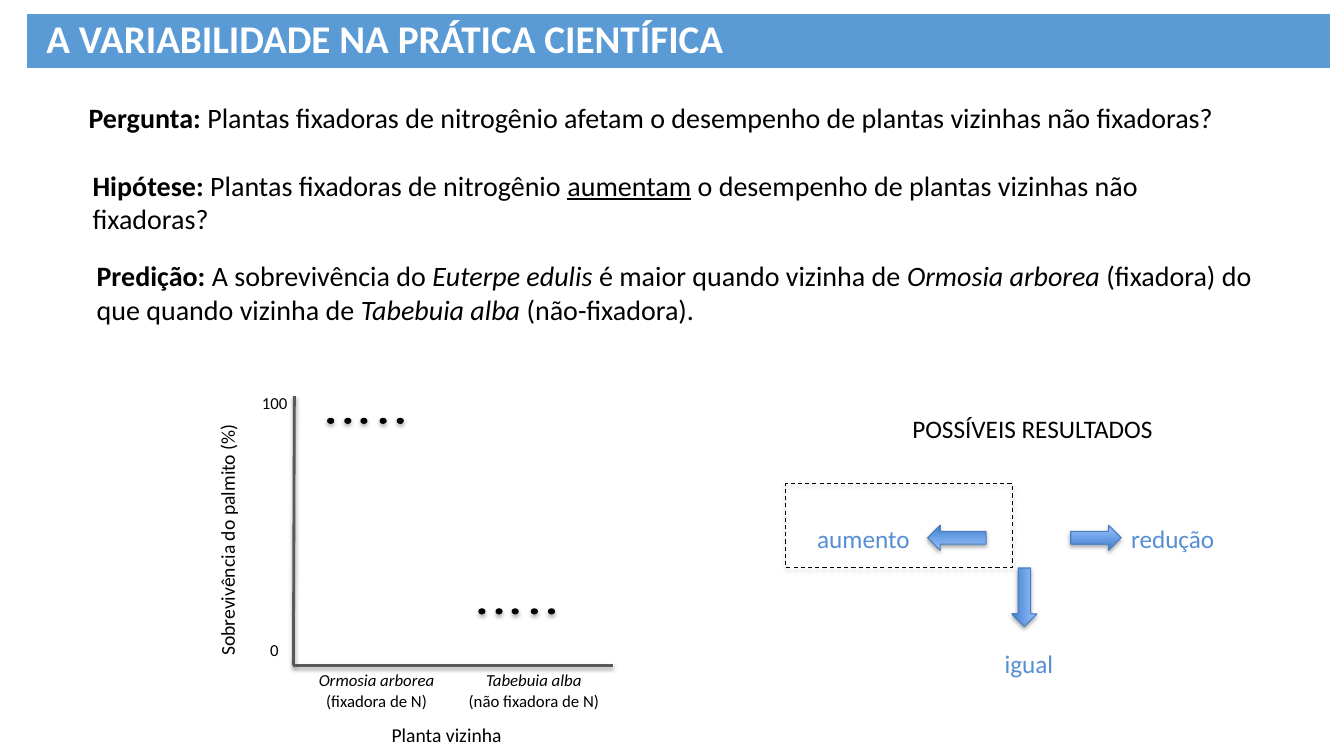
from dataclasses import dataclass

from lxml import etree
from pptx import Presentation
from pptx.dml.color import RGBColor
from pptx.enum.dml import MSO_LINE
from pptx.enum.shapes import MSO_CONNECTOR, MSO_SHAPE
from pptx.enum.text import MSO_ANCHOR, MSO_AUTO_SIZE, PP_ALIGN
from pptx.oxml.ns import qn
from pptx.util import Inches, Pt

LEFT, MID, RIGHT = PP_ALIGN.LEFT, PP_ALIGN.CENTER, PP_ALIGN.RIGHT
OVAL, RECT, ARROW = MSO_SHAPE.OVAL, MSO_SHAPE.RECTANGLE, MSO_SHAPE.RIGHT_ARROW
STRAIGHT, DASH = MSO_CONNECTOR.STRAIGHT, MSO_LINE.DASH
MIDDLE, FIXED = MSO_ANCHOR.MIDDLE, MSO_AUTO_SIZE.NONE

FONT = "Calibri"
BLACK = RGBColor(0x00, 0x00, 0x00)
WHITE = RGBColor(0xFF, 0xFF, 0xFF)
GRAY = RGBColor(0x59, 0x59, 0x59)
BAR = RGBColor(0x5B, 0x9B, 0xD5)
BLUE = RGBColor(0x55, 0x8E, 0xD5)
EDGE = RGBColor(0x4A, 0x7E, 0xBB)
LIGHT = RGBColor(0x9B, 0xC1, 0xFF)
DARK = RGBColor(0x3F, 0x80, 0xCD)

Box = tuple[float, float, float, float]
Run = tuple[str, str]


@dataclass
class Label:
    box: Box
    lines: list[list[Run]]
    size: int
    color: RGBColor = BLACK
    align: PP_ALIGN = LEFT
    turn: int = 0


@dataclass
class Arrow:
    box: Box
    turn: int


@dataclass
class Axis:
    start: tuple[float, float]
    end: tuple[float, float]


TITLE = "A VARIABILIDADE NA PRÁTICA CIENTÍFICA"
CLAIMS: list[tuple[Box, list[Run]]] = [
    ((0.78, 0.95, 11.7, 0.44), [
        ("Pergunta: ", "b"),
        ("Plantas fixadoras de nitrogênio afetam o desempenho de plantas vizinhas não fixadoras?", ""),
    ]),
    ((0.82, 1.62, 11.7, 0.77), [
        ("Hipótese: ", "b"),
        ("Plantas fixadoras de nitrogênio ", ""),
        ("aumentam", "u"),
        (" o desempenho de plantas vizinhas não fixadoras?", ""),
    ]),
    ((0.86, 2.52, 11.7, 0.77), [
        ("Predição: ", "b"),
        ("A sobrevivência do ", ""),
        ("Euterpe edulis ", "i"),
        ("é maior quando vizinha de ", ""),
        ("Ormosia arborea ", "i"),
        ("(fixadora) do que quando vizinha de ", ""),
        ("Tabebuia alba ", "i"),
        ("(não-fixadora).", ""),
    ]),
]
LABELS = [Label(box, [runs], 20) for box, runs in CLAIMS] + [
    Label((8.95, 4.05, 2.67, 0.4), [[("POSSÍVEIS RESULTADOS", "")]], 18),
    Label((7.45, 5.14, 1.67, 0.4), [[("aumento", "")]], 18, BLUE, RIGHT),
    Label((11.12, 5.14, 1.67, 0.4), [[("redução", "")]], 18, BLUE),
    Label((9.37, 6.38, 1.67, 0.4), [[("igual", "")]], 18, BLUE, MID),
    Label((0.67, 4.85, 3.17, 0.34), [[("Sobrevivência do palmito (%)", "")]], 14, turn=270),
    Label((2.58, 6.3, 0.33, 0.3), [[("0", "")]], 12),
    Label((2.5, 3.85, 0.58, 0.3), [[("100", "")]], 12),
    Label((2.78, 6.6, 1.91, 0.5),
          [[("Ormosia arborea", "i")], [("(fixadora de N)", "")]], 12, align=MID),
    Label((4.42, 6.6, 1.75, 0.5),
          [[("Tabebuia alba", "i")], [("(não fixadora de N)", "")]], 12, align=MID),
    Label((3.43, 7.12, 2, 0.34), [[("Planta vizinha", "")]], 14, align=MID),
]
ARROWS = [
    Arrow((10.62, 5.21, 0.5, 0.25), 0),
    Arrow((9.87, 5.8, 0.58, 0.25), 90),
    Arrow((9.2, 5.21, 0.58, 0.25), 180),
]
AXES = [Axis((2.92, 3.93), (2.91, 6.6)), Axis((2.91, 6.6), (6.08, 6.6))]
GROUPS = [(3.25, 4.15), (4.75, 6.04)]
STEPS = [0, 0.17, 0.33, 0.52, 0.69]


def add_shade(props) -> None:
    for old in props.findall(qn("a:effectLst")):
        props.remove(old)
    effects = etree.SubElement(props, qn("a:effectLst"))
    shade = etree.SubElement(effects, qn("a:outerShdw"), blurRad=str(Pt(3.1)),
                             dist=str(Pt(1.8)), dir="5400000", rotWithShape="0")
    tone = etree.SubElement(shade, qn("a:srgbClr"), val=str(BLACK))
    etree.SubElement(tone, qn("a:alpha"), val="35000")


def add_run(para, text: str, style: str, size: int, color: RGBColor) -> None:
    run = para.add_run()
    run.text = text
    font = run.font
    font.name, font.size, font.color.rgb = FONT, Pt(size), color
    font.bold, font.italic, font.underline = "b" in style, "i" in style, "u" in style


def add_label(slide, label: Label) -> None:
    shape = slide.shapes.add_textbox(*map(Inches, label.box))
    shape.rotation = label.turn
    frame = shape.text_frame
    frame.word_wrap = True
    for spot, runs in enumerate(label.lines):
        para = frame.add_paragraph() if spot else frame.paragraphs[0]
        para.alignment = label.align
        for text, style in runs:
            add_run(para, text, style, label.size, label.color)


def add_form(slide, kind: MSO_SHAPE, box: Box, edge: RGBColor):
    shape = slide.shapes.add_shape(kind, *map(Inches, box))
    shape.line.color.rgb = edge
    shape.line.width = Pt(0.75)
    return shape


def add_dot(slide, left: float, top: float) -> None:
    dot = add_form(slide, OVAL, (left, top, 0.06, 0.05), BLACK)
    dot.fill.solid()
    dot.fill.fore_color.rgb = BLACK
    add_shade(dot.element.spPr)


def add_arrow(slide, arrow: Arrow) -> None:
    shape = add_form(slide, ARROW, arrow.box, EDGE)
    shape.rotation = arrow.turn
    shape.fill.gradient()
    shape.fill.gradient_angle = 270
    for stop, color in zip(shape.fill.gradient_stops, (LIGHT, DARK)):
        stop.color.rgb = color
    add_shade(shape.element.spPr)


def add_frame(slide, box: Box) -> None:
    frame = add_form(slide, RECT, box, BLACK)
    frame.fill.background()
    frame.line.dash_style = DASH
    add_shade(frame.element.spPr)


def add_axis(slide, axis: Axis) -> None:
    line = slide.shapes.add_connector(STRAIGHT, *map(Inches, axis.start + axis.end))
    line.line.color.rgb = GRAY
    line.line.width = Pt(2)
    add_shade(line.element.spPr)


def set_title(slide) -> None:
    title = slide.shapes.title
    title.left, title.top, title.width, title.height = map(Inches, (0.27, 0.14, 12.92, 0.53))
    title.fill.solid()
    title.fill.fore_color.rgb = BAR
    title.line.color.rgb = BAR
    title.line.width = Pt(0.75)
    frame = title.text_frame
    frame.auto_size, frame.vertical_anchor = FIXED, MIDDLE
    frame.margin_left = Inches(0.19)
    para = frame.paragraphs[0]
    para.alignment, para.line_spacing = LEFT, 0.9
    add_run(para, TITLE, "b", 28, WHITE)


def main() -> None:
    deck = Presentation()
    deck.slide_width, deck.slide_height = Inches(13.33), Inches(7.5)
    slide = deck.slides.add_slide(deck.slide_layouts[5])
    set_title(slide)
    for left, top in GROUPS:
        for step in STEPS:
            add_dot(slide, left + step, top)
    for arrow in ARROWS:
        add_arrow(slide, arrow)
    add_frame(slide, (7.79, 4.8, 2.25, 0.83))
    for axis in AXES:
        add_axis(slide, axis)
    for label in LABELS:
        add_label(slide, label)
    deck.save("out.pptx")


if __name__ == "__main__":
    main()
